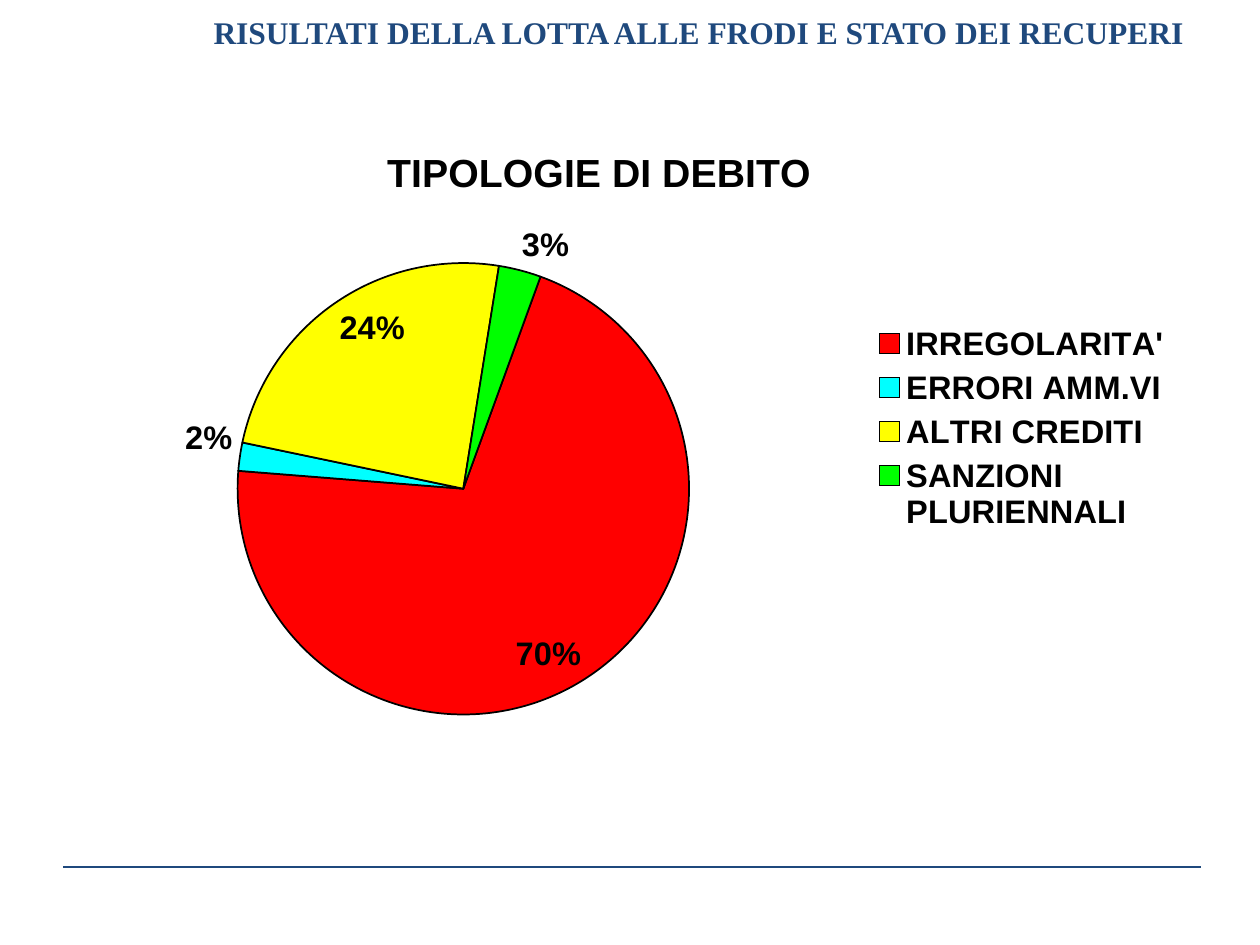
from dataclasses import dataclass

from lxml import etree
from pptx import Presentation
from pptx.chart.data import CategoryChartData
from pptx.dml.color import RGBColor
from pptx.enum.chart import XL_CHART_TYPE, XL_LABEL_POSITION, XL_LEGEND_POSITION
from pptx.enum.shapes import MSO_CONNECTOR
from pptx.enum.text import MSO_ANCHOR, PP_ALIGN
from pptx.oxml import parse_xml
from pptx.oxml.ns import nsdecls, qn
from pptx.util import Inches, Pt

PIE = XL_CHART_TYPE.PIE
RIGHT = XL_LEGEND_POSITION.RIGHT
INSIDE, OUTSIDE = XL_LABEL_POSITION.INSIDE_END, XL_LABEL_POSITION.OUTSIDE_END
STRAIGHT = MSO_CONNECTOR.STRAIGHT
TOP, CENTER = MSO_ANCHOR.TOP, PP_ALIGN.CENTER


@dataclass(frozen=True)
class Theme:
    """Fonts, sizes and colours of the slide."""
    title_font: str = "Times New Roman"
    chart_font: str = "Arial"
    title_size: float = 18
    chart_title_size: float = 22.4
    chart_size: float = 18.6
    navy: str = "1F497D"
    ink: str = "000000"


THEME = Theme()
WIDTH, HEIGHT = Inches(10), Inches(7.5)
HEADING = "RISULTATI DELLA LOTTA ALLE FRODI E STATO DEI RECUPERI"
CHART_TITLE = "TIPOLOGIE DI DEBITO"
DEBTS = [
    ("IRREGOLARITA'", 70, "FF0000", INSIDE),
    ("ERRORI AMM.VI", 2, "00FFFF", OUTSIDE),
    ("ALTRI CREDITI", 24, "FFFF00", INSIDE),
    ("SANZIONI PLURIENNALI", 3, "00FF00", OUTSIDE),
]


def style_font(font, name, size, color):
    """Make a font bold with the given face, size and colour."""
    font.name, font.size, font.bold = name, Pt(size), True
    font.color.rgb = RGBColor.from_string(color)


def add_title(slide):
    """Move the title placeholder to the top and fill it."""
    title = slide.shapes.title
    title.left, title.top = Inches(1.09), Inches(0.05)
    title.width, title.height = Inches(8.91), Inches(0.3)
    frame = title.text_frame
    frame.word_wrap, frame.vertical_anchor = True, TOP
    para = frame.paragraphs[0]
    para.alignment = CENTER
    span = para.add_run()
    span.text = HEADING
    style_font(span.font, THEME.title_font, THEME.title_size, THEME.navy)


def add_rule(slide):
    """Draw the line above the foot of the slide."""
    level = Inches(6.88)
    rule = slide.shapes.add_connector(STRAIGHT, Inches(0.5), level, Inches(9.53), level)
    rule.line.color.rgb = RGBColor.from_string(THEME.navy)
    rule.line.width = Pt(1.5)
    etree.SubElement(rule._element.spPr, qn("a:effectLst"))


def place(element, inner, **shares):
    """Set a chart part's layout as shares of the chart's size."""
    for old in element.findall(qn("c:layout")):
        element.remove(old)
    target = '<c:layoutTarget val="inner"/>' if inner else ""
    modes = "".join(f'<c:{key}Mode val="edge"/>' for key in "xy")
    values = "".join(f'<c:{key} val="{share}"/>' for key, share in shares.items())
    layout = parse_xml(
        f'<c:layout {nsdecls("c")}><c:manualLayout>{target}{modes}{values}'
        "</c:manualLayout></c:layout>"
    )
    before = element.find(qn("c:overlay"))
    if before is None:
        element.insert(0, layout)
    else:
        before.addprevious(layout)


def style_slices(plot):
    """Colour the slices and set where their labels stand."""
    plot.vary_by_categories = True
    series = plot.series[0]
    labels = series.data_labels
    labels.show_value = True
    labels.number_format, labels.number_format_is_linked = '0"%"', False
    labels.position = INSIDE
    style_font(labels.font, THEME.chart_font, THEME.chart_size, THEME.ink)
    for index, (_, _, color, position) in enumerate(DEBTS):
        point = series.points[index]
        point.format.fill.solid()
        point.format.fill.fore_color.rgb = RGBColor.from_string(color)
        point.format.line.color.rgb = RGBColor.from_string(THEME.ink)
        point.format.line.width = Pt(1)
        label = point.data_label
        style_font(label.font, THEME.chart_font, THEME.chart_size, THEME.ink)
        label.position = position
    for label in plot._element.iter(qn("c:dLbl")):
        form = parse_xml(
            f'<c:numFmt {nsdecls("c")} formatCode="0&quot;%&quot;" sourceLinked="0"/>'
        )
        label.find(qn("c:idx")).addnext(form)
    angle = plot._element.find(qn("c:firstSliceAng"))
    if angle is None:
        angle = etree.SubElement(plot._element, qn("c:firstSliceAng"))
    angle.set("val", "20")


def add_pie(slide):
    """Add the pie of debt types with its title and legend."""
    data = CategoryChartData()
    data.categories = [name for name, *_ in DEBTS]
    data.add_series(CHART_TITLE, [share for _, share, *_ in DEBTS])
    chart = slide.shapes.add_chart(
        PIE, 0, Inches(0.97), Inches(9.43), Inches(4.85), data
    ).chart
    style_font(chart.font, THEME.chart_font, THEME.chart_size, THEME.ink)

    chart.has_title = True
    span = chart.chart_title.text_frame.paragraphs[0].add_run()
    span.text = CHART_TITLE
    style_font(span.font, THEME.chart_font, THEME.chart_title_size, THEME.ink)
    chart.chart_title.include_in_layout = False
    place(chart.chart_title._element, False, x=0.32, y=0.03)

    chart.has_legend = True
    chart.legend.position, chart.legend.include_in_layout = RIGHT, False
    style_font(chart.legend.font, THEME.chart_font, THEME.chart_size, THEME.ink)
    place(chart.legend._element, False, x=0.73, y=0.32, w=0.26, h=0.36)

    style_slices(chart.plots[0])
    place(chart._chartSpace.chart.plotArea, True, x=0.2, y=0.23, w=0.38, h=0.74)


def main():
    """Build the slide and save the deck."""
    deck = Presentation()
    deck.slide_width, deck.slide_height = WIDTH, HEIGHT
    page = deck.slides.add_slide(deck.slide_layouts[5])
    add_rule(page)
    add_title(page)
    add_pie(page)
    deck.save("out.pptx")


if __name__ == "__main__":
    main()
